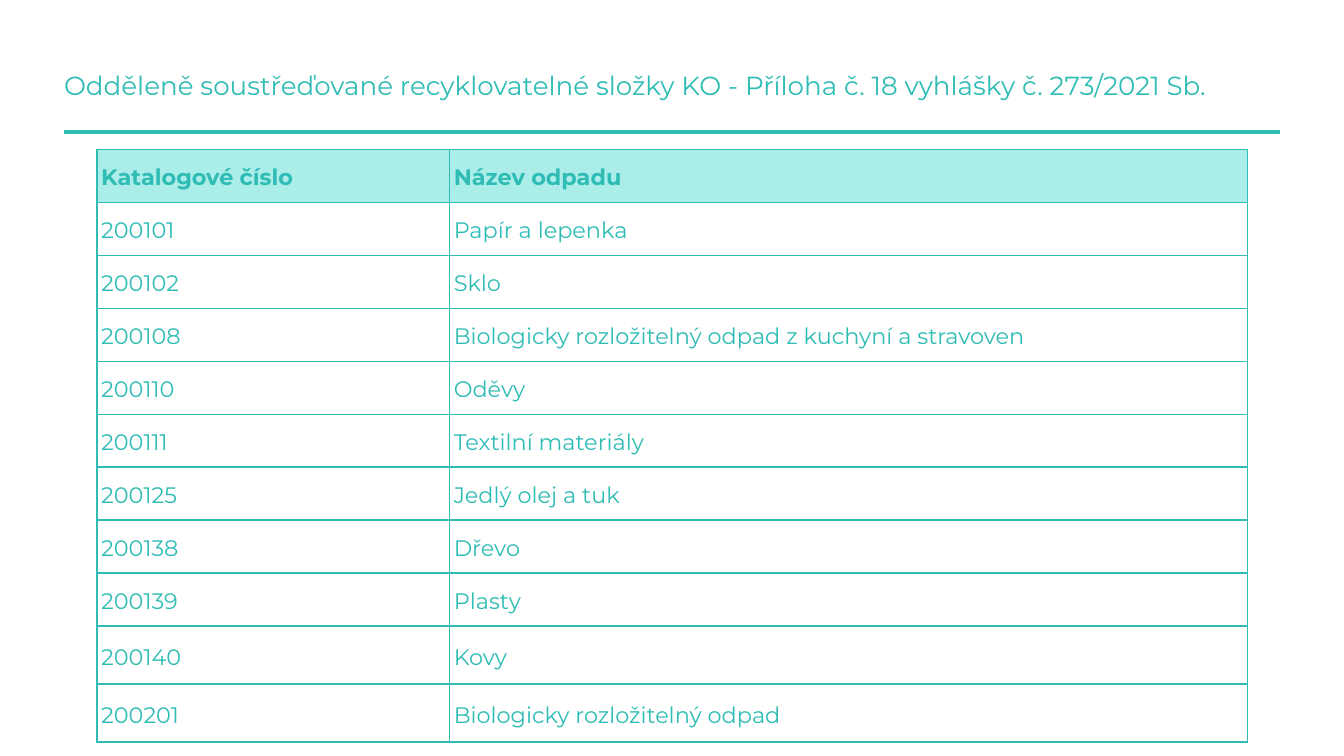
from lxml import etree
from pptx import Presentation
from pptx.dml.color import RGBColor
from pptx.enum import shapes, text
from pptx.oxml import ns
from pptx.util import Pt

COLORS = {"teal": "2EBCB4", "header": "AAEDE9"}
FONT = "Montserrat"

TITLE = "Odděleně soustřeďované recyklovatelné složky KO - Příloha č. 18 vyhlášky č. 273/2021 Sb."
WASTE = [
    ("Katalogové číslo", "Název odpadu"),
    ("200101", "Papír a lepenka"),
    ("200102", "Sklo"),
    ("200108", "Biologicky rozložitelný odpad z kuchyní a stravoven"),
    ("200110", "Oděvy"),
    ("200111", "Textilní materiály"),
    ("200125", "Jedlý olej a tuk"),
    ("200138", "Dřevo"),
    ("200139", "Plasty"),
    ("200140", "Kovy"),
    ("200201", "Biologicky rozložitelný odpad"),
]
COL_WIDTHS = [188.9, 427.3]
ROW_HEIGHTS = [28.4] * 9 + [31.1] * 2


def rgb(name):
    return RGBColor.from_string(COLORS[name])


def write(tf, content, size=12, bold=False, color="teal", spacing=1.15):
    p = tf.paragraphs[0]
    p.alignment = text.PP_ALIGN.LEFT
    p.line_spacing = spacing
    r = p.add_run()
    r.text = content
    r.font.name = FONT
    r.font.size = Pt(size)
    r.font.bold = bold
    r.font.color.rgb = rgb(color)


def add_title(s, x, y, w, h):
    sp = s.shapes.title
    sp.left, sp.top, sp.width, sp.height = Pt(x), Pt(y), Pt(w), Pt(h)
    tf = sp.text_frame
    tf.word_wrap = True
    tf.auto_size = text.MSO_AUTO_SIZE.NONE
    tf.vertical_anchor = text.MSO_ANCHOR.TOP
    tf.margin_left = tf.margin_right = tf.margin_top = tf.margin_bottom = Pt(7.2)
    write(tf, TITLE, size=14)


def add_rule(s, x, y, w):
    line = s.shapes.add_connector(
        shapes.MSO_CONNECTOR.STRAIGHT, Pt(x), Pt(y), Pt(x + w), Pt(y))
    line.line.color.rgb = rgb("teal")
    line.line.width = Pt(2.25)
    etree.SubElement(line._element.spPr, ns.qn("a:effectLst"))


def set_borders(cell, width=0.75, color="teal"):
    props = cell._tc.get_or_add_tcPr()
    # Borders come before the fill in the cell properties
    for i, side in enumerate(("lnL", "lnR", "lnT", "lnB")):
        ln = etree.Element(ns.qn(f"a:{side}"), w=str(Pt(width)))
        fill = etree.SubElement(ln, ns.qn("a:solidFill"))
        etree.SubElement(fill, ns.qn("a:srgbClr"), val=COLORS[color])
        props.insert(i, ln)


def add_waste_table(s, x, y, w, h):
    table = s.shapes.add_table(
        len(WASTE), len(COL_WIDTHS), Pt(x), Pt(y), Pt(w), Pt(h)).table
    table.horz_banding = False
    for col, width in zip(table.columns, COL_WIDTHS):
        col.width = Pt(width)
    for i, (row, values) in enumerate(zip(table.rows, WASTE)):
        row.height = Pt(ROW_HEIGHTS[i])
        for cell, value in zip(row.cells, values):
            cell.vertical_anchor = text.MSO_ANCHOR.MIDDLE
            cell.margin_left = cell.margin_right = Pt(2.25)
            cell.margin_top = cell.margin_bottom = Pt(1.5)
            if i == 0:
                cell.fill.solid()
                cell.fill.fore_color.rgb = rgb("header")
            else:
                cell.fill.background()
            set_borders(cell)
            write(cell.text_frame, value, bold=i == 0)


def main():
    prs = Presentation()
    prs.slide_width, prs.slide_height = Pt(720), Pt(405)
    s = prs.slides.add_slide(prs.slide_layouts[5])
    # Title with the line under it
    add_title(s, 27.1, 27.4, 666, 32.4)
    add_rule(s, 34.2, 70.5, 651.6)
    # Waste catalogue
    add_waste_table(s, 52, 80, sum(COL_WIDTHS), sum(ROW_HEIGHTS))
    prs.save("out.pptx")


if __name__ == "__main__":
    main()
